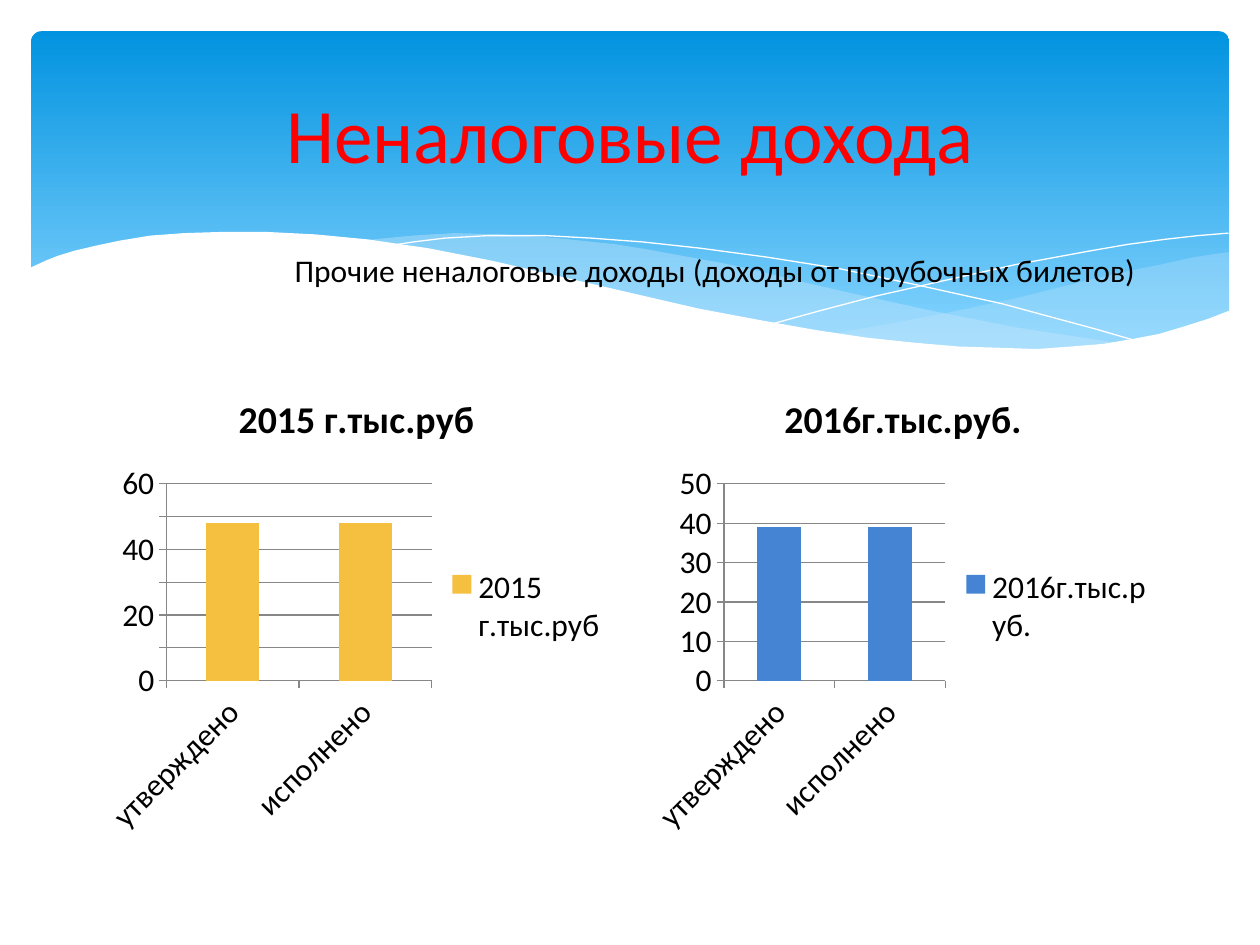
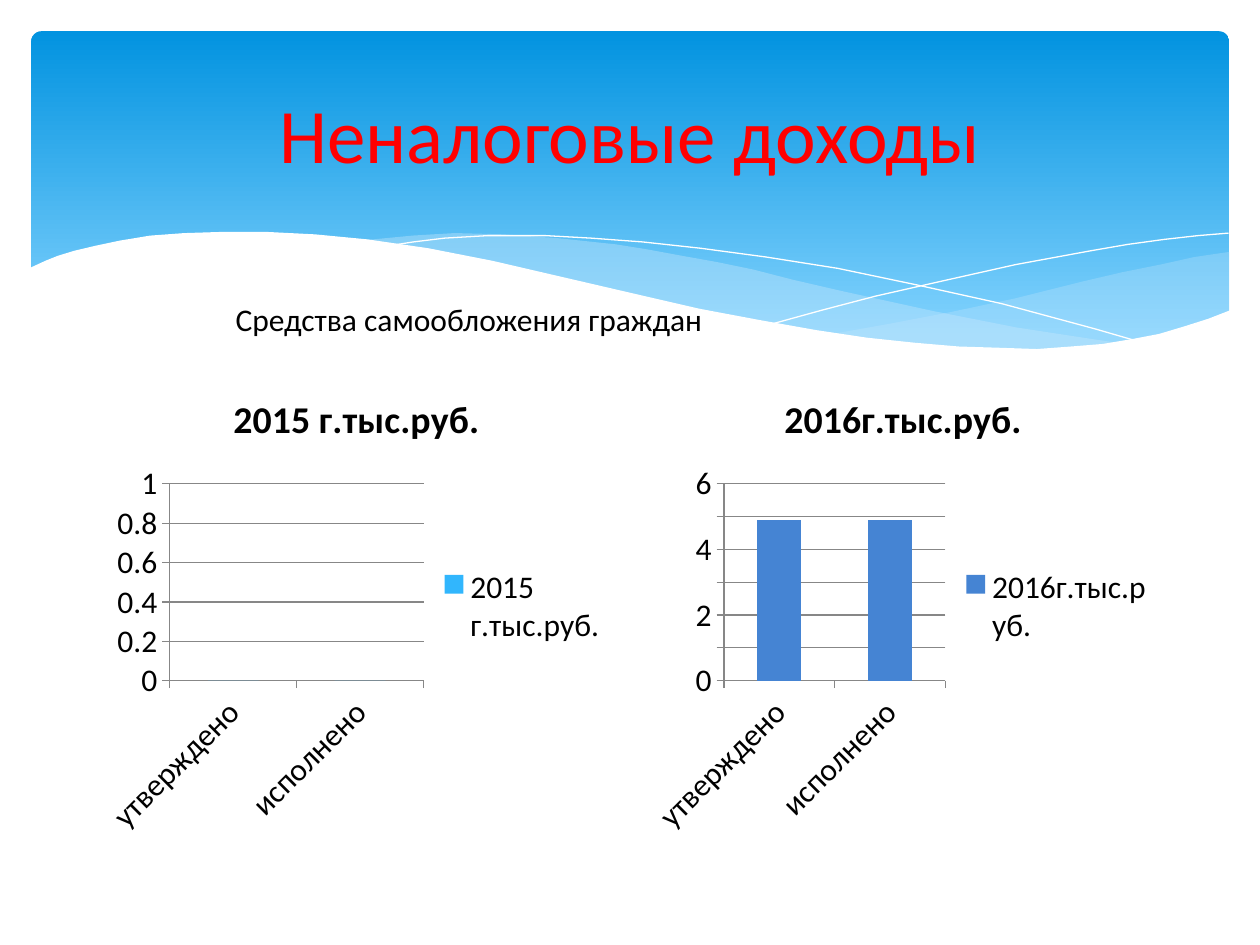
"""Two slides on non-tax income, with a shared wave band and paired column charts."""
import pptx
import pptx.chart.data
import pptx.dml.color
import pptx.enum.chart
import pptx.enum.shapes
import pptx.enum.text
import pptx.oxml
import pptx.oxml.ns
import pptx.util
from lxml import etree

Cm = pptx.util.Cm
Pt = pptx.util.Pt
FONT = "Calibri"
RED, BLACK, WHITE, GREY = "FF0000", "000000", "FFFFFF", "878787"
DEEP, PALE, MIST = "0293E0", "83D3FE", "C6E7FC"
GOLD, BLUE, SKY = "F5C040", "4584D3", "31B6FD"
UNIT = Cm(2.54) / 100


def tint(color, code):
    """Set a colour format from a hex string."""
    color.rgb = pptx.dml.color.RGBColor.from_string(code)


def style(font, size, code, bold=False):
    """Set face, size, weight and colour of a font."""
    font.name = FONT
    font.size = Pt(size)
    font.bold = bold
    tint(font.color, code)


right = [
    (975, 200), (948, 204), (921, 210), (891, 216), (861, 223), (805, 237),
    (753, 248), (706, 257), (661, 265), (691, 269), (719, 272), (745, 275),
    (769, 277), (803, 278), (835, 277), (863, 275), (889, 272), (913, 267),
    (935, 262), (949, 257), (976, 247), (976, 200)]
middle = [
    (893, 273), (866, 269), (807, 260), (741, 247), (668, 231), (629, 222),
    (598, 214), (569, 208), (541, 203), (514, 198), (489, 194), (442, 189),
    (399, 186), (361, 185), (328, 187), (286, 191), (323, 196), (362, 203),
    (404, 211), (449, 222), (530, 240), (584, 252), (618, 258), (650, 264),
    (680, 268), (709, 272), (736, 275), (773, 277), (807, 278), (838, 278),
    (867, 276), (893, 273)]
fall = [
    (309, 195), (328, 192), (353, 189), (387, 187), (433, 187), (469, 189),
    (510, 192), (556, 197), (608, 204), (665, 213), (727, 226), (795, 241),
    (869, 261), (907, 272)]
rise = [
    (613, 257), (653, 246), (695, 235), (748, 223), (806, 210), (866, 199),
    (895, 194), (924, 190), (951, 187), (975, 185)]
front = [
    (977, 246), (959, 253), (940, 259), (920, 265), (899, 269), (875, 273),
    (850, 275), (823, 277), (793, 276), (761, 275), (726, 272), (688, 268),
    (648, 262), (603, 254), (555, 245), (503, 233), (447, 220), (391, 207),
    (340, 197), (292, 190), (250, 186), (211, 184), (177, 184), (146, 185),
    (119, 187), (95, 191), (76, 195), (59, 199), (46, 203), (36, 207),
    (23, 213), (23, 329), (977, 329)]
waves = [(right, MIST, 29), (middle, MIST, 40), (fall, None, 0),
         (rise, None, 0), (front, WHITE, 100)]

names = ["утверждено", "исполнено"]
pages = [
    ("Неналоговые дохода",
     "Прочие неналоговые доходы (доходы от порубочных билетов)",
     (5.69, 4.93, 18.24, 1.02),
     [("2015 г.тыс.руб", 48, GOLD), ("2016г.тыс.руб.", 39, BLUE)]),
    ("Неналоговые доходы",
     "Средства самообложения граждан",
     (4.5, 5.92, 10.34, 1.02),
     [("2015 г.тыс.руб.", 0, SKY), ("2016г.тыс.руб.", 4.9, BLUE)]),
]

deck = pptx.Presentation()
deck.slide_width, deck.slide_height = Cm(25.4), Cm(19.05)
layout = deck.slide_layouts[5]
head = layout.placeholders[0]
head.left, head.top, head.width, head.height = Cm(1.27), Cm(0.94), Cm(22.86), Cm(3.48)
slides = [deck.slides.add_slide(layout) for page in pages]

shapes = slides[0].shapes
band = shapes.add_shape(pptx.enum.shapes.MSO_SHAPE.ROUNDED_RECTANGLE,
                        Cm(0.63), Cm(0.63), Cm(24.15), Cm(6.86))
band.adjustments[0] = 0.03
band.fill.gradient()
band.fill.gradient_angle = 270
for stop, code, place in zip(band.fill.gradient_stops, (DEEP, PALE), (0, 0.9)):
    tint(stop.color, code)
    stop.position = place
band.line.fill.background()
back = [band]
for points, code, alpha in waves:
    pen = shapes.build_freeform(*points[0], scale=UNIT)
    pen.add_line_segments(points[1:], close=code is not None)
    wave = pen.convert_to_shape()
    if code:
        wave.fill.solid()
        tint(wave.fill.fore_color, code)
        wave.line.fill.background()
        if alpha < 100:
            clr = wave.element.spPr.find(".//" + pptx.oxml.ns.qn("a:srgbClr"))
            etree.SubElement(clr, pptx.oxml.ns.qn("a:alpha")).set("val", str(alpha * 1000))
    else:
        wave.fill.background()
        tint(wave.line.color, WHITE)
        wave.line.width = Pt(0)
    back.append(wave)
for spot, item in enumerate(back, 2):
    item.shadow.inherit = False
    layout.shapes.element.insert(spot, item.element)

for slide, (title, note, box, charts) in zip(slides, pages):
    slide.shapes.title.text_frame.text = title
    slide.shapes.title.text_frame.vertical_anchor = pptx.enum.text.MSO_ANCHOR.MIDDLE
    line = slide.shapes.title.text_frame.paragraphs[0]
    line.alignment = pptx.enum.text.PP_ALIGN.CENTER
    style(line.runs[0].font, 44, RED)

    for col, (name, value, code) in enumerate(charts):
        data = pptx.chart.data.CategoryChartData()
        data.categories = names
        data.add_series(name, [value] * len(names))
        chart = slide.shapes.add_chart(
            pptx.enum.chart.XL_CHART_TYPE.COLUMN_CLUSTERED,
            Cm(1.88 + 11.02 * col), Cm(7.44), Cm(10.62), Cm(9.58), data).chart
        style(chart.font, 18, BLACK)
        chart.has_title = True
        chart.chart_title.text_frame.text = name
        style(chart.chart_title.text_frame.paragraphs[0].runs[0].font, 21.6, BLACK, True)
        chart.has_legend = True
        chart.legend.position = pptx.enum.chart.XL_LEGEND_POSITION.RIGHT
        chart.legend.include_in_layout = False
        plot = chart.plots[0]
        plot.gap_width = 150
        plot.vary_by_categories = False
        fill = plot.series[0].format.fill
        fill.solid()
        tint(fill.fore_color, code)
        for axis in (chart.category_axis, chart.value_axis):
            axis.major_tick_mark = pptx.enum.chart.XL_TICK_MARK.OUTSIDE
            tint(axis.format.line.color, GREY)
        chart.value_axis.has_major_gridlines = True
        tint(chart.value_axis.major_gridlines.format.line.color, GREY)

    text = slide.shapes.add_textbox(*map(Cm, box)).text_frame
    text.word_wrap = False
    text.auto_size = pptx.enum.text.MSO_AUTO_SIZE.SHAPE_TO_FIT_TEXT
    text.text = note
    style(text.paragraphs[0].runs[0].font, 18, BLACK)

deck.save("out.pptx")
